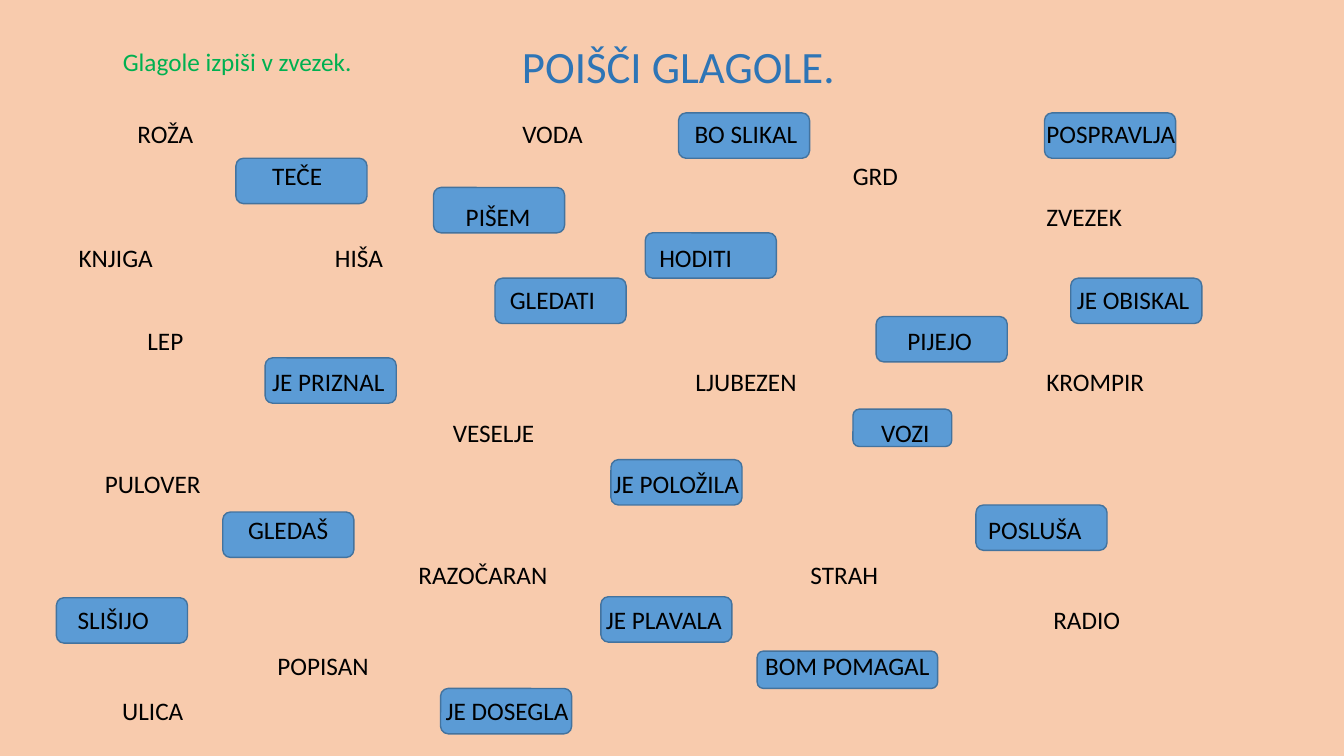
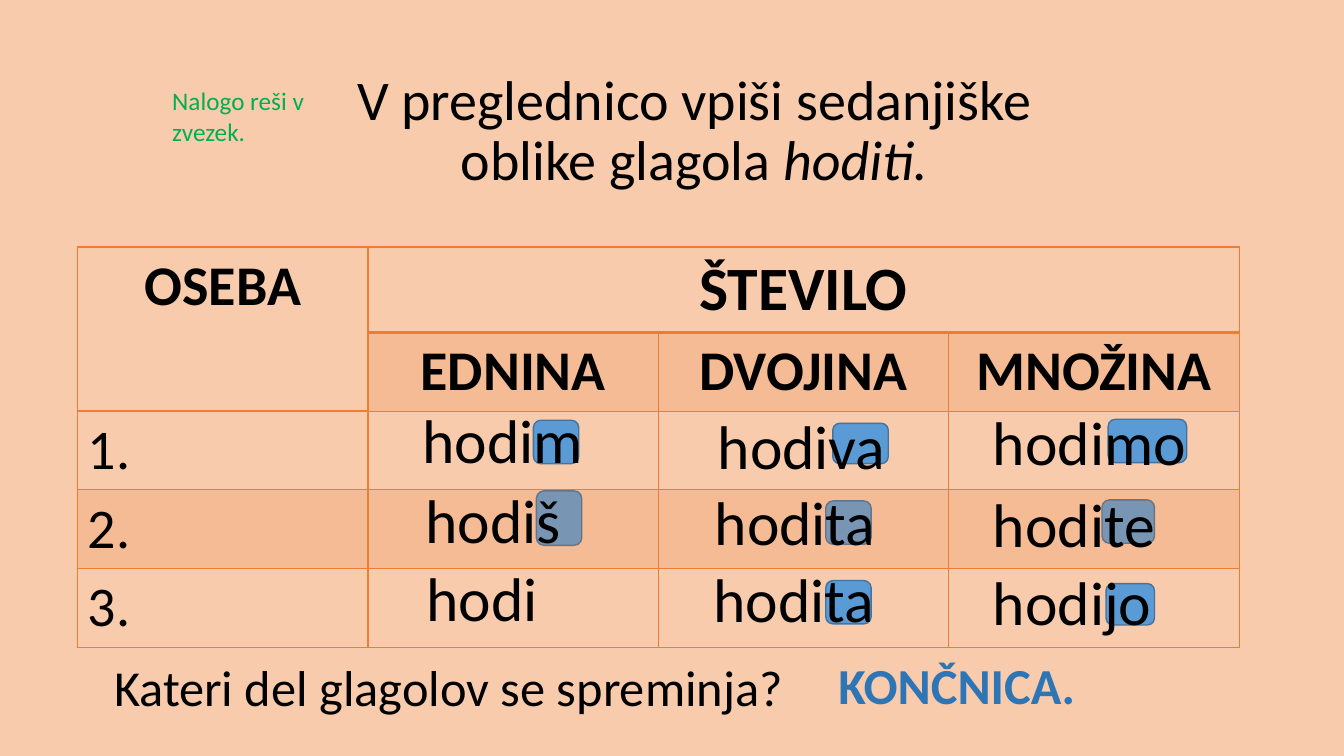
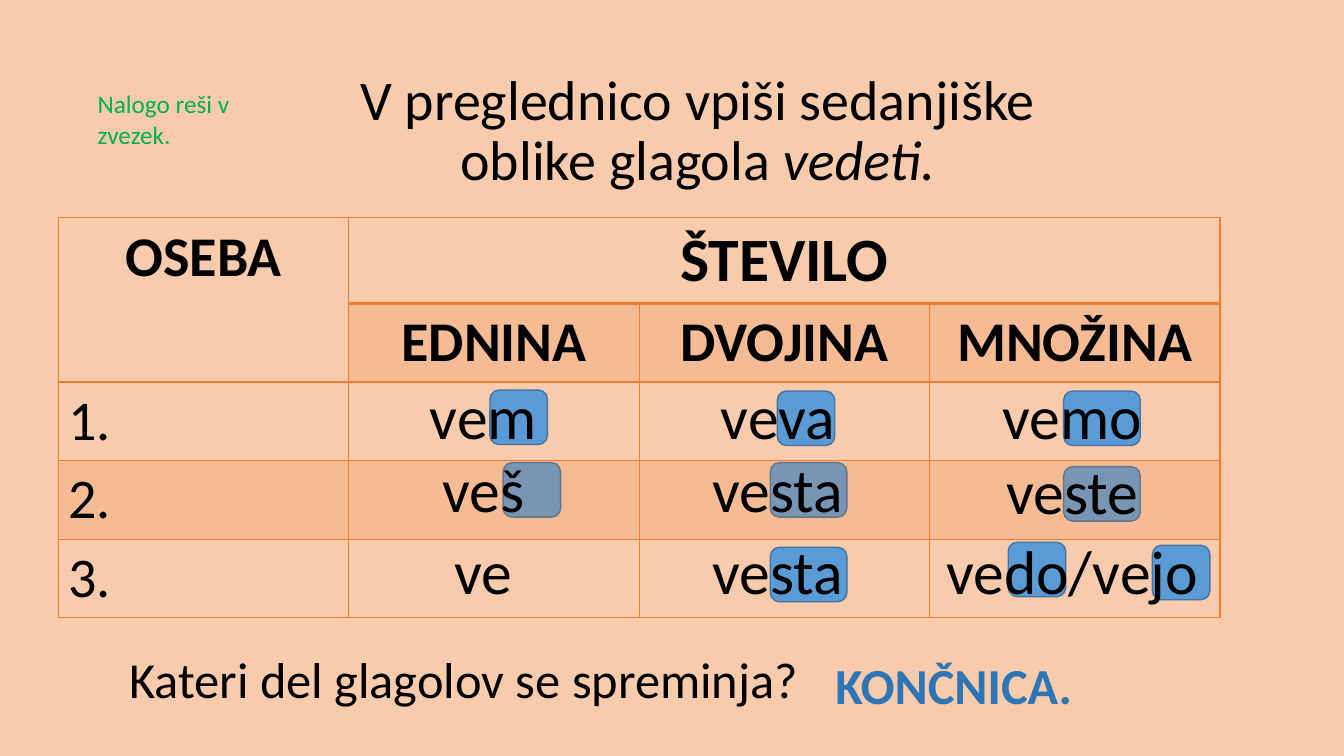
from dataclasses import dataclass

from lxml.etree import SubElement
from pptx import Presentation
from pptx.dml.color import RGBColor as RGB
from pptx.enum.shapes import MSO_SHAPE as Shape
from pptx.enum.text import MSO_ANCHOR as Anchor
from pptx.enum.text import MSO_AUTO_SIZE as Auto
from pptx.enum.text import PP_ALIGN as Align
from pptx.oxml import parse_xml
from pptx.oxml.ns import nsdecls, qn
from pptx.util import Inches, Pt


@dataclass(frozen=True)
class Theme:
    """Hold the colours, font and type sizes of the deck."""

    font: str = "Calibri"
    back: str = "F8CBAD"
    ink: str = "000000"
    blue: str = "2E75B6"
    green: str = "00B050"
    pill: str = "5B9BD5"
    edge: str = "43739E"
    rim: str = "ED7D31"
    small: int = 18
    title: int = 32
    ask: int = 36
    head: int = 40
    verb: int = 44
    plain: str = "{2D5ABB26-0587-4C30-8999-92F81FD0307C}"


T = Theme()
SIDES = {"l": Align.LEFT, "c": Align.CENTER, "r": Align.RIGHT}

PILLS = [
    (0.56, 5.93), (4.37, 6.83), (5.96, 5.92), (7.51, 6.46, 1.79, 0.37),
    (9.68, 5.01), (8.46, 4.06, 0.98, 0.37), (6.06, 4.56), (2.21, 5.08),
    (2.63, 3.55), (8.69, 3.14), (10.62, 2.76), (4.91, 2.76), (2.34, 1.57),
    (4.3, 1.86), (6.4, 2.31), (10.36, 1.12), (6.73, 1.12),
]
UPPER = [
    (1, 0, "ROŽA", "c"), (1, 2, "VODA", "c"), (1, 3, "BO SLIKAL", "c"),
    (1, 5, "POSPRAVLJA", "l"), (2, 1, "TEČE", "l"), (2, 4, "GRD", "l"),
    (3, 2, "PIŠEM", "l"), (3, 5, "ZVEZEK", "l"), (4, 0, "KNJIGA", "l"),
    (4, 1, "HIŠA", "c"), (4, 3, "HODITI", "l"), (5, 2, "GLEDATI", "c"),
    (5, 5, "JE OBISKAL", "c"), (6, 0, "LEP", "c"), (6, 4, "PIJEJO", "c"),
    (7, 1, "JE PRIZNAL", "l"), (7, 3, "LJUBEZEN", "c"), (7, 5, "KROMPIR", "l"),
]
LOWER = [
    (0, 2, "VESELJE", "c"), (0, 4, "VOZI", "r"), (1, 0, "PULOVER", "c"),
    (1, 3, "JE POLOŽILA", "r"), (2, 1, "GLEDAŠ", "l"), (2, 5, "POSLUŠA", "c"),
    (3, 2, "RAZOČARAN", "l"), (3, 4, "STRAH", "c"), (4, 0, "SLIŠIJO", "l"),
    (4, 3, "JE PLAVALA", "c"), (4, 5, "RADIO", "r"), (5, 1, "POPISAN", "c"),
    (5, 4, "BOM POMAGAL", "r"), (6, 0, "ULICA", "c"), (6, 2, "JE DOSEGLA", "r"),
]
WALK = {
    "verb": "hoditi.",
    "pills": [
        (10.97, 5.79, 0.48, 0.41), (10.93, 4.96, 0.52, 0.43),
        (10.99, 4.16, 0.78, 0.43), (8.19, 5.76, 0.45, 0.43),
        (8.19, 4.97, 0.45, 0.43), (8.26, 4.2, 0.55, 0.4),
        (5.32, 4.87, 0.45, 0.54), (5.29, 4.17, 0.45, 0.43),
    ],
    "grid": (0.77, 2.45),
    "forms": [
        ("hodim", 4.09, 3.94, 1.83), ("hodiš", 4.12, 4.73, 1.83),
        ("hodi", 4.13, 5.51, 1.83), ("hodiva", 7.02, 4, 2.47),
        ("hodita", 6.99, 4.75, 1.83), ("hodita", 6.98, 5.52, 1.83),
        ("hodimo", 9.75, 3.96, 2.49), ("hodite", 9.75, 4.77, 2.49),
        ("hodijo", 9.75, 5.55, 2.49),
    ],
    "side": "l",
    "task": (2.8, 0.59, 8.17, 1.45),
    "ask": (1.03, 6.27, 6.84, 1.16),
    "reply": (7.87, 6.41, 3.24, 0.84),
    "note": (1.61, 0.8, 1.76, 0.71),
}
KNOW = {
    "verb": "vedeti.",
    "pills": [
        (4.86, 3.87, 0.57, 0.54), (4.99, 4.59, 0.57, 0.54),
        (7.71, 3.88, 0.57, 0.54), (7.64, 4.59, 0.76, 0.54),
        (7.64, 5.43, 0.76, 0.54), (10.55, 3.88, 0.76, 0.54),
        (10.55, 4.63, 0.76, 0.54), (10, 5.38, 0.57, 0.54),
        (11.43, 5.41, 0.57, 0.54),
    ],
    "grid": (0.58, 2.16),
    "forms": [
        ("vem", 3.88, 3.7, 1.83), ("veš", 3.88, 4.42, 1.83),
        ("ve", 3.88, 5.24, 1.83), ("veva", 6.8, 3.7, 1.83),
        ("vesta", 6.8, 4.42, 1.83), ("vesta", 6.8, 5.24, 1.83),
        ("vemo", 9.72, 3.7, 1.83), ("veste", 9.72, 4.44, 1.83),
        ("vedo/vejo", 9.28, 5.24, 2.71),
    ],
    "side": "c",
    "task": (3.06, 0.59, 7.72, 1.45),
    "ask": (1.18, 6.19, 6.84, 1.16),
    "reply": (7.84, 6.41, 3.24, 0.84),
    "note": (0.87, 0.83, 1.77, 0.71),
}


def style(run, size, color=T.ink, bold=False):
    """Format one run."""
    font = run.font
    font.name, font.size, font.bold = T.font, Pt(size), bold
    font.color.rgb = RGB.from_string(color)


def write(frame, text, size, color=T.ink, side="l", bold=False):
    """Set one paragraph of text and return it."""
    frame.text = text
    para = frame.paragraphs[0]
    para.alignment = SIDES[side]
    style(para.runs[0], size, color, bold)
    return para


def label(sld, at, text, size, color=T.ink, side="l", bold=False, mid=False):
    """Add a wrapped text box and return its paragraph."""
    frame = sld.shapes.add_textbox(*map(Inches, at)).text_frame
    frame.word_wrap = True
    para = write(frame, text, size, color, side, bold)
    if mid:
        frame.vertical_anchor = Anchor.MIDDLE
        para.line_spacing = 0.9
    return para


def title(sld, at, text, size, color=T.ink):
    """Place and format the title."""
    box = sld.shapes.title
    box.left, box.top, box.width, box.height = map(Inches, at)
    frame = box.text_frame
    write(frame, text, size, color, "c").line_spacing = 0.9
    frame.vertical_anchor = Anchor.MIDDLE
    frame.auto_size = Auto.NONE


def pill(sld, left, top, wide=1.3, high=0.45):
    """Add a blue rounded marker."""
    box = sld.shapes.add_shape(
        Shape.ROUNDED_RECTANGLE, *map(Inches, (left, top, wide, high)))
    box.shadow.inherit = False
    box.fill.solid()
    box.fill.fore_color.rgb = RGB.from_string(T.pill)
    box.line.color.rgb = RGB.from_string(T.edge)
    box.line.width = Pt(1)


def grid(sld, left, top, cols, rows):
    """Add an unstyled table with the given column widths and row heights."""
    at = map(Inches, (left, top, sum(cols), sum(rows)))
    table = sld.shapes.add_table(len(rows), len(cols), *at).table
    table.first_row = table.horz_banding = False
    table._tbl.tblPr.find(qn("a:tableStyleId")).text = T.plain
    for col, wide in zip(table.columns, cols):
        col.width = Inches(wide)
    for row, high in zip(table.rows, rows):
        row.height = Inches(high)
    for cell in table.iter_cells():
        cell.fill.background()
    return table


def words(sld, left, top, cols, rows, items):
    """Scatter words over a table."""
    table = grid(sld, left, top, cols, rows)
    for row, col, text, side in items:
        write(table.cell(row, col).text_frame, text, T.small, side=side)


def rim(cell, base):
    """Draw the four borders of a cell."""
    prop = cell._tc.get_or_add_tcPr()
    for spot, side in enumerate("LRTB"):
        wide = Pt(base if side == "B" else 1)
        prop.insert(spot, parse_xml(
            f'<a:ln{side} {nsdecls("a")} w="{wide}"><a:solidFill>'
            f'<a:srgbClr val="{T.rim}"/></a:solidFill></a:ln{side}>'))


def tint(cell):
    """Fill a cell with a pale orange band."""
    cell.fill.solid()
    cell.fill.fore_color.rgb = RGB.from_string(T.rim)
    color = cell._tc.tcPr.find(qn("a:solidFill"))[0]
    SubElement(color, qn("a:alpha")).set("val", "20000")


def chart(sld, left, top):
    """Add the table of persons and numbers."""
    table = grid(sld, left, top, [2.88] * 4, [0.85] + [0.78] * 4)
    for row in range(5):
        for col in range(4):
            cell = table.cell(row, col)
            rim(cell, 2 if row == 0 else 1)
            if row == 3 or row == 1 and col:
                tint(cell)
    table.cell(0, 0).merge(table.cell(1, 0))
    table.cell(0, 1).merge(table.cell(0, 3))
    write(table.cell(0, 0).text_frame, "OSEBA", T.head, side="c", bold=True)
    write(table.cell(0, 1).text_frame, "ŠTEVILO", T.verb, side="c", bold=True)
    for col, text in enumerate(("EDNINA", "DVOJINA", "MNOŽINA"), 1):
        write(table.cell(1, col).text_frame, text, T.head, side="c", bold=True)
    for num in range(1, 4):
        write(table.cell(num + 1, 0).text_frame, f"{num}.", T.head)


def hunt(sld):
    """Build the slide for finding verbs."""
    for at in PILLS:
        pill(sld, *at)
    words(sld, 0.68, 0.73, [1.92] * 6, [0.41] * 8, UPPER)
    words(sld, 0.67, 4.1, [1.69] * 4 + [1.89] * 2 + [1.69],
          [0.51] + [0.45] * 6, LOWER)
    title(sld, (3.2, 0.36, 7.06, 0.64), "POIŠČI GLAGOLE.", T.title, T.blue)
    label(sld, (1.12, 0.41, 2.76, 0.4), "Glagole izpiši v zvezek.",
          T.small, T.green)


def drill(sld, data):
    """Build a slide for conjugating one verb."""
    for at in data["pills"]:
        pill(sld, *at)
    chart(sld, *data["grid"])
    for text, left, top, wide in data["forms"]:
        label(sld, (left, top, wide, 0.84), text, T.verb, side=data["side"])
    task = label(sld, data["task"],
                 "V preglednico vpiši sedanjiške oblike glagola ",
                 T.head, side="c", mid=True)
    verb = task.add_run()
    verb.text = data["verb"]
    style(verb, T.head)
    verb.font.italic = True
    title(sld, data["ask"], "Kateri del glagolov se spreminja?", T.ask)
    label(sld, data["reply"], "KONČNICA.", T.ask, T.blue, "c", True, True)
    label(sld, data["note"], "Nalogo reši v zvezek.", T.small, T.green)


def main():
    """Build and save the deck."""
    deck = Presentation()
    deck.slide_width, deck.slide_height = Inches(13.33), Inches(7.5)
    fill = deck.slide_master.background.fill
    fill.solid()
    fill.fore_color.rgb = RGB.from_string(T.back)
    page = deck.slide_layouts[5]
    hunt(deck.slides.add_slide(page))
    for data in (WALK, KNOW):
        drill(deck.slides.add_slide(page), data)
    deck.save("out.pptx")


if __name__ == "__main__":
    main()
